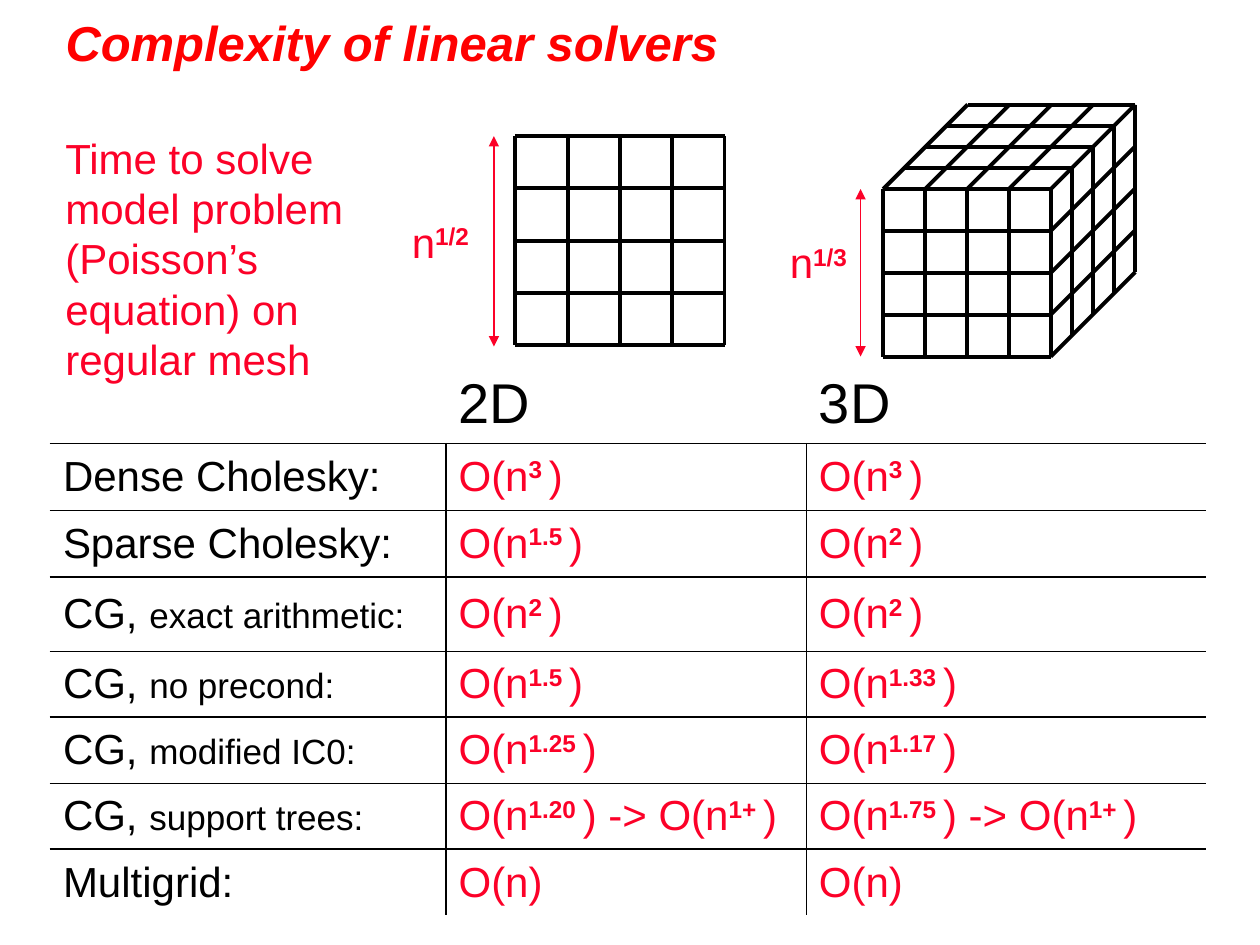
import dataclasses

import lxml.etree
import pptx
import pptx.dml.color
import pptx.enum.shapes
import pptx.enum.text
import pptx.oxml.ns
import pptx.util

Inches = pptx.util.Inches
qn = pptx.oxml.ns.qn


@dataclasses.dataclass
class Theme:
    font: str = "Arial"
    ink: str = "000000"
    accent: str = "FC0128"
    title: str = "FF0000"
    title_size: int = 28
    head_size: int = 32
    text_size: int = 24
    small_size: int = 20
    mesh_width: float = 2.25
    thin_width: float = 1


def power(text):
    """Split "n^2^" into (text, raised) parts: every second part is raised."""
    return [(part, i % 2 == 1) for i, part in enumerate(text.split("^")) if part]


class Deck:
    def __init__(self, theme):
        self.theme = theme
        self.prs = pptx.Presentation()
        self.prs.slide_width, self.prs.slide_height = Inches(10), Inches(7.5)
        self.s = self.prs.slides.add_slide(self.prs.slide_layouts[5])

    def run(self, p, text, size, color, raised=False, **extra):
        r = p.add_run()
        r.text = text
        formats = {"name": self.theme.font, "size": pptx.util.Pt(size), "bold": raised}
        for name, value in {**formats, **extra}.items():
            setattr(r.font, name, value)
        r.font.color.rgb = pptx.dml.color.RGBColor.from_string(color)
        if raised:
            r.font._element.set("baseline", "30000")

    def title(self, text, x, y, w, h):
        sp = self.s.shapes.title
        box = {"left": x, "top": y, "width": w, "height": h}
        for name, value in box.items():
            setattr(sp, name, Inches(value))
        sp.text_frame.vertical_anchor = pptx.enum.text.MSO_ANCHOR.MIDDLE
        p = sp.text_frame.paragraphs[0]
        p.alignment = pptx.enum.text.PP_ALIGN.LEFT
        self.run(p, text, self.theme.title_size, self.theme.title, bold=True, italic=True)

    def text(self, text, x, y, w, h, wrap=True):
        sp = self.s.shapes.add_textbox(Inches(x), Inches(y), Inches(w), Inches(h))
        tf = sp.text_frame
        tf.word_wrap = wrap
        for part, raised in power(text):
            self.run(tf.paragraphs[0], part, self.theme.text_size, self.theme.accent, raised)

    def line(self, x1, y1, x2, y2, color, width, arrows=False):
        sp = self.s.shapes.add_connector(
            pptx.enum.shapes.MSO_CONNECTOR.STRAIGHT,
            Inches(x1), Inches(y1), Inches(x2), Inches(y2))
        sp.line.color.rgb = pptx.dml.color.RGBColor.from_string(color)
        sp.line.width = pptx.util.Pt(width)
        if arrows:
            ln = sp.line._get_or_add_ln()
            for end in ("a:headEnd", "a:tailEnd"):
                lxml.etree.SubElement(ln, qn(end), type="triangle")
        lxml.etree.SubElement(sp._element.spPr, qn("a:effectLst"))

    def mesh(self, origin, u, v, first=(0, 0), n=4):
        """Draw an n by n grid spanned by u and v.

        first gives the first line along u and along v; 1 leaves out a shared edge.
        """
        x, y = origin
        for along, across, start in ((u, v, first[0]), (v, u, first[1])):
            for i in range(start, n + 1):
                x1, y1 = x + across[0] * i / n, y + across[1] * i / n
                self.line(x1, y1, x1 + along[0], y1 + along[1],
                          self.theme.ink, self.theme.mesh_width)

    def dimension(self, x, top, bottom):
        self.line(x, bottom, x, top, self.theme.accent, self.theme.thin_width, arrows=True)

    def border(self, cell, sides):
        tc_pr = cell._tc.get_or_add_tcPr()
        drawn = [side for side in "LRTB" if side in sides]
        for i, side in enumerate(drawn):
            ln = lxml.etree.Element(qn("a:ln" + side),
                                    w=str(pptx.util.Pt(self.theme.thin_width)))
            fill = lxml.etree.SubElement(ln, qn("a:solidFill"))
            lxml.etree.SubElement(fill, qn("a:srgbClr"), val=self.theme.ink)
            tc_pr.insert(i, ln)

    def table(self, rows, x, y, widths, heights):
        frame = self.s.shapes.add_table(
            len(rows), len(widths), Inches(x), Inches(y),
            Inches(sum(widths)), Inches(sum(heights)))
        table = frame.table
        table.first_row = table.horz_banding = False
        for column, width in zip(table.columns, widths):
            column.width = Inches(width)
        for row, height in zip(table.rows, heights):
            row.height = Inches(height)
        last_row, last_col = len(rows) - 1, len(widths) - 1
        for i, row in enumerate(rows):
            for j, text in enumerate(row):
                cell = table.cell(i, j)
                cell.fill.background()
                cell.vertical_anchor = pptx.enum.text.MSO_ANCHOR.MIDDLE
                self.cell_text(cell.text_frame.paragraphs[0], text, i, j)
                sides = ("T" if i else "") + ("B" if i < last_row else "")
                if i:
                    sides += ("L" if j else "") + ("R" if j < last_col else "")
                self.border(cell, sides)

    def cell_text(self, p, text, i, j):
        t = self.theme
        if i == 0:
            if text:
                self.run(p, text, t.head_size, t.ink)
        elif j == 0:
            # The part after "|" is the smaller qualifier
            for part, size in zip(text.split("|"), (t.text_size, t.small_size)):
                self.run(p, part, size, t.ink)
        else:
            for part, raised in power(text):
                self.run(p, part, t.text_size, t.accent, raised)


def main():
    deck = Deck(Theme())
    deck.title("Complexity of linear solvers", 0.42, 0, 9.33, 0.67)

    # Cost of each solver
    rows = [
        ("", "2D", "3D"),
        ("Dense Cholesky:", "O(n^3 ^)", "O(n^3 ^)"),
        ("Sparse Cholesky:", "O(n^1.5 ^)", "O(n^2 ^)"),
        ("CG, |exact arithmetic:", "O(n^2 ^)", "O(n^2 ^)"),
        ("CG, |no precond:", "O(n^1.5 ^)", "O(n^1.33 ^)"),
        ("CG, |modified IC0:", "O(n^1.25 ^)", "O(n^1.17 ^)"),
        ("CG, |support trees:", "O(n^1.20 ^) -> O(n^1+ ^)", "O(n^1.75 ^) -> O(n^1+ ^)"),
        ("Multigrid:", "O(n)", "O(n)"),
    ]
    deck.table(rows, 0.4, 2.89, (3.14, 2.86, 3.17),
               (0.63, 0.53, 0.53, 0.59, 0.52, 0.53, 0.52, 0.53))

    # Square mesh with its side length
    deck.mesh((4.09, 1.08), (1.66, 0), (0, 1.66))
    deck.text("n^1/2^", 3.17, 1.67, 0.7, 0.5, wrap=False)
    deck.dimension(3.92, 1.08, 2.75)

    # Cube mesh: front, top and right faces
    side, depth = 1.33, 0.67
    across, down, back = (side, 0), (0, side), (depth, -depth)
    deck.mesh((7.01, 1.5), across, down)
    deck.mesh((7.01, 1.5), across, back, first=(1, 0))
    deck.mesh((7.01 + side, 1.5), back, down, first=(1, 1))
    deck.text("n^1/3^", 6.17, 1.83, 0.7, 0.5, wrap=False)
    deck.dimension(6.83, 1.5, 2.83)

    # Problem statement
    deck.text("Time to solve model problem (Poisson’s equation) on regular mesh",
              0.42, 1, 2.42, 2.1)

    deck.prs.save("out.pptx")


if __name__ == "__main__":
    main()
